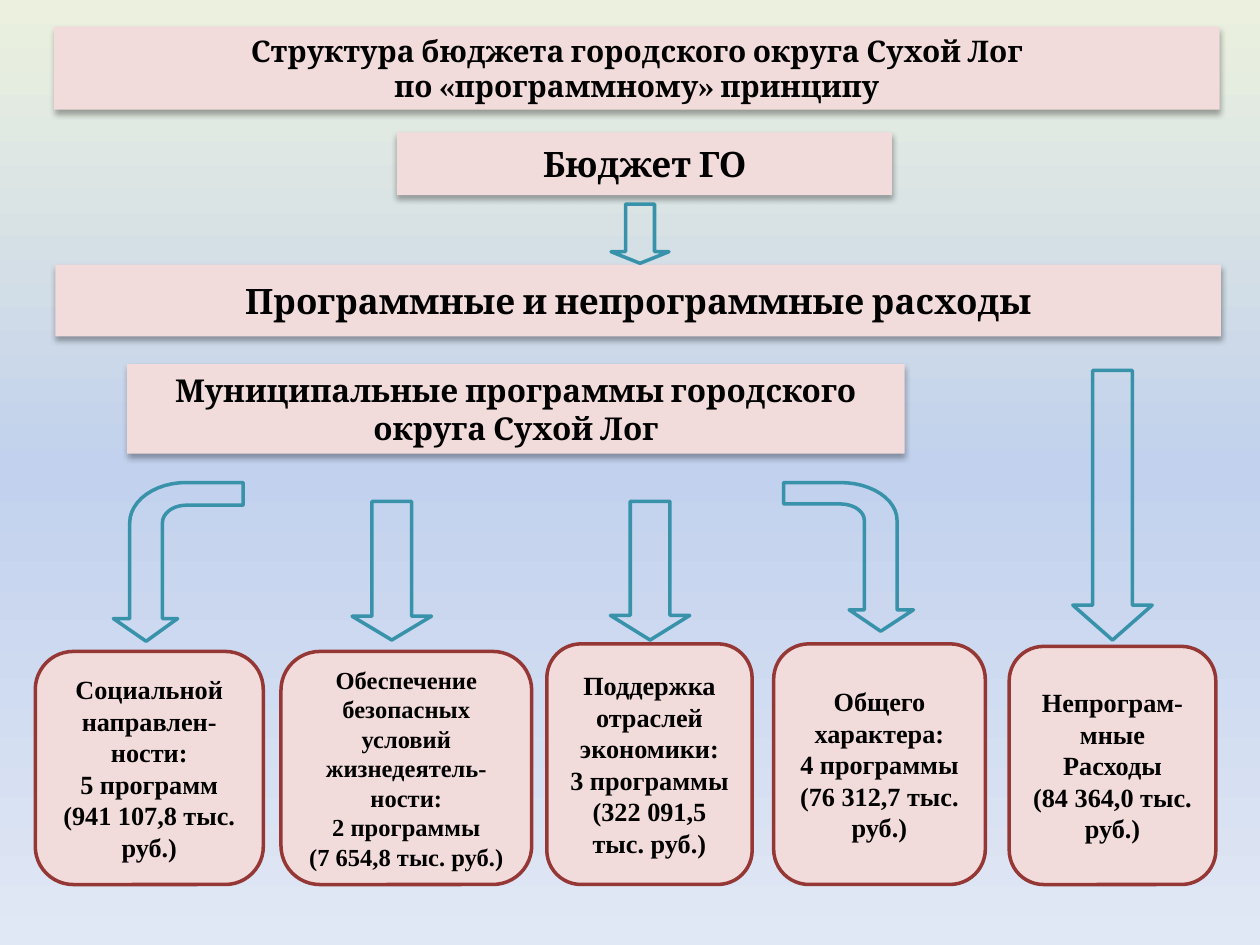
from copy import deepcopy
from math import cos, pi, sin

from lxml import etree
from pptx import Presentation
from pptx.dml.color import RGBColor
from pptx.enum.shapes import MSO_SHAPE
from pptx.enum.text import MSO_ANCHOR, MSO_AUTO_SIZE, PP_ALIGN
from pptx.oxml import parse_xml
from pptx.util import Inches, Pt

DOWN_ARROW = MSO_SHAPE.DOWN_ARROW
RECTANGLE = MSO_SHAPE.RECTANGLE
ROUNDED = MSO_SHAPE.ROUNDED_RECTANGLE
DRAWING = "http://schemas.openxmlformats.org/drawingml/2006/main"
COLORS = {
    "box": "F2DCDB", "border": "953735", "arrow": "3792AA", "text": "000000",
    "top": "EBF1DE", "middle": "C2D1ED", "bottom": "E1E8F5",
}
SHADOW = (
    f'<a:effectLst xmlns:a="{DRAWING}">'
    '<a:outerShdw blurRad="44450" dist="27940" dir="5400000" rotWithShape="0">'
    '<a:srgbClr val="000000"><a:alpha val="32000"/></a:srgbClr>'
    '</a:outerShdw></a:effectLst>'
)


def fill_box(shape, lines, font, size):
    """Colour a box and write one centred bold paragraph per line."""
    shape.fill.solid()
    shape.fill.fore_color.rgb = RGBColor.from_string(COLORS["box"])
    shape.line.fill.background()
    frame = shape.text_frame
    frame.word_wrap = True
    frame.auto_size = MSO_AUTO_SIZE.NONE
    frame.vertical_anchor = MSO_ANCHOR.MIDDLE
    for index, line in enumerate(lines):
        paragraph = frame.paragraphs[0] if index == 0 else frame.add_paragraph()
        paragraph.alignment = PP_ALIGN.CENTER
        run = paragraph.add_run()
        run.text = line
        run.font.name = font
        run.font.size = Pt(size)
        run.font.bold = True
        run.font.color.rgb = RGBColor.from_string(COLORS["text"])


def outline(shape, color):
    shape.shadow.inherit = False
    shape.line.color.rgb = RGBColor.from_string(COLORS[color])
    shape.line.width = Pt(2)


presentation = Presentation()
presentation.slide_width = Inches(10)
presentation.slide_height = Inches(7.5)
slide = presentation.slides.add_slide(presentation.slide_layouts[5])

# Vertical three-colour background
background = slide.background.fill
background.gradient()
background.gradient_angle = 270
stop_list = slide.element.find(f".//{{{DRAWING}}}gsLst")
stop_list.append(deepcopy(stop_list[0]))
for stop, position, color in zip(background.gradient_stops, (0, 0.5, 1), ("top", "middle", "bottom")):
    stop.position = position
    stop.color.rgb = RGBColor.from_string(COLORS[color])

# Title and heading bars
bars = [
    (0.43, 0.21, 9.25, 0.66, 17, ["Структура бюджета городского округа Сухой Лог", "по «программному» принципу"]),
    (3.15, 1.05, 3.93, 0.5, 20, ["Бюджет ГО"]),
    (0.44, 2.1, 9.25, 0.57, 20, ["Программные и непрограммные расходы"]),
    (1.01, 2.89, 6.17, 0.71, 18, ["Муниципальные программы городского округа Сухой Лог"]),
]
for index, (left, top, width, height, size, lines) in enumerate(bars):
    place = [Inches(value) for value in (left, top, width, height)]
    if index == 0:
        bar = slide.shapes.title
        bar.left, bar.top, bar.width, bar.height = place
    else:
        bar = slide.shapes.add_shape(RECTANGLE, *place)
    fill_box(bar, lines, "Cambria", size)
    bar.shadow.inherit = False
    properties = bar.element.spPr
    properties.replace(properties.find(f"{{{DRAWING}}}effectLst"), parse_xml(etree.tostring(etree.fromstring(SHADOW))))

# Expense groups
groups = [
    (0.28, 5.17, 1.81, 15, ["Социальной направлен-", "ности:", "5 программ (941 107,8 тыс. руб.)"]),
    (2.23, 5.17, 1.99, 14, ["Обеспечение безопасных условий жизнедеятель- ности:", "2 программы", "(7 654,8 тыс. руб.)"]),
    (4.34, 5.11, 1.63, 15, ["Поддержка отраслей экономики:", "3 программы (322 091,5 тыс. руб.)"]),
    (6.14, 5.11, 1.68, 15, ["Общего характера:", "4 программы (76 312,7 тыс. руб.)"]),
    (8.01, 5.13, 1.64, 15, ["Непрограм-мные", "Расходы", "(84 364,0 тыс. руб.)"]),
]
groups_bottom = 7.02
for left, top, width, size, lines in groups:
    group = slide.shapes.add_shape(
        ROUNDED, Inches(left), Inches(top), Inches(width), Inches(groups_bottom - top))
    fill_box(group, lines, "Times New Roman", size)
    outline(group, "border")

# Straight arrows: centre, top, width, height, head length ratio
arrows = [
    (5.08, 1.62, 0.46, 0.47, 0.2),
    (3.11, 3.98, 0.63, 1.1, 0.3),
    (5.16, 3.98, 0.63, 1.1, 0.31),
    (8.83, 2.94, 0.63, 2.14, 0.44),
]
for center, top, width, height, head in arrows:
    arrow = slide.shapes.add_shape(
        DOWN_ARROW, Inches(center - width / 2), Inches(top), Inches(width), Inches(height))
    arrow.adjustments[0] = 0.5
    arrow.adjustments[1] = head
    arrow.fill.background()
    outline(arrow, "arrow")

# Bent arrows: side, bend centre x and y, outer and inner radius y, shoulder, tip
bent_arrows = [
    (-1, 1.48, 4.15, 0.32, 0.14, 4.91, 5.09),
    (1, 6.67, 4.13, 0.3, 0.13, 4.84, 5.01),
]
quarter = [step * pi / 24 for step in range(13)]
for side, x, y, outer, inner, shoulder, tip in bent_arrows:
    points = [(-0.45, y - outer)]
    points += [(0.45 * sin(angle), y - outer * cos(angle)) for angle in quarter]
    points += [(0.45, shoulder), (0.58, shoulder), (0.32, tip), (0.07, shoulder), (0.19, shoulder)]
    points += [(0.19 * sin(angle), y - inner * cos(angle)) for angle in reversed(quarter)]
    points.append((-0.45, y - inner))
    corners = [(Inches(x + side * offset), Inches(height)) for offset, height in points]
    builder = slide.shapes.build_freeform(*corners[0])
    builder.add_line_segments(corners[1:], close=True)
    bent_arrow = builder.convert_to_shape()
    bent_arrow.fill.background()
    outline(bent_arrow, "arrow")

presentation.save("out.pptx")
